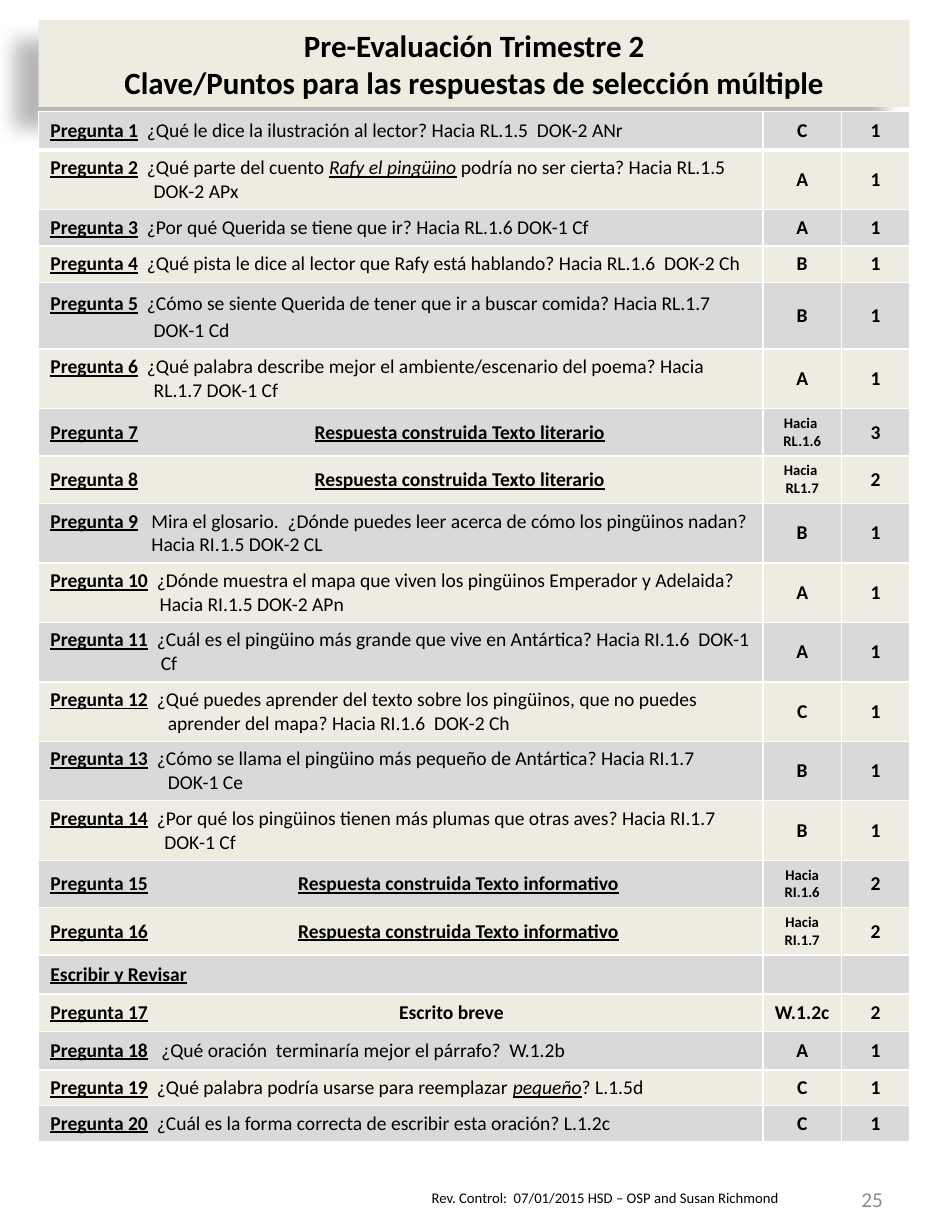
from lxml import etree
from pptx import Presentation
from pptx.dml.color import RGBColor
from pptx.enum.text import MSO_ANCHOR, MSO_AUTO_SIZE, PP_ALIGN
from pptx.oxml.ns import qn
from pptx.util import Inches, Pt

LEFT, CENTER, RIGHT = PP_ALIGN.LEFT, PP_ALIGN.CENTER, PP_ALIGN.RIGHT
TOP, MIDDLE = MSO_ANCHOR.TOP, MSO_ANCHOR.MIDDLE
GRAY, CREAM, WHITE = "D9D9D9", "EEECE1", "FFFFFF"

TITLE = ("Pre-Evaluación Trimestre 2\n"
         "Clave/Puntos para las respuestas de selección múltiple")
FOOTER = "Rev. Control:  07/01/2015 HSD – OSP and Susan Richmond"
PAGE_NUMBER = "25"
LITERARY = "Respuesta construida Texto literario"
INFORMATIVE = "Respuesta construida Texto informativo"

# Label, question (_italic_), answer, points, row height, hanging indent
QUESTIONS = [
    ("Pregunta 1", "  ¿Qué le dice la ilustración al lector? Hacia RL.1.5  DOK-2 ANr", "C", "1", 0.33, 0),
    ("Pregunta 2", "  ¿Qué parte del cuento _Rafy el pingüino_ podría no ser cierta? Hacia RL.1.5 DOK-2 APx",
     "A", "1", 0.5, 0.88),
    ("Pregunta 3", "  ¿Por qué Querida se tiene que ir? Hacia RL.1.6 DOK-1 Cf", "A", "1", 0.31, 0),
    ("Pregunta 4", "  ¿Qué pista le dice al lector que Rafy está hablando? Hacia RL.1.6  DOK-2 Ch",
     "B", "1", 0.31, 0),
    ("Pregunta 5", "  ¿Cómo se siente Querida de tener que ir a buscar comida? Hacia RL.1.7\nDOK-1 Cd",
     "B", "1", 0.57, 0.88),
    ("Pregunta 6", "  ¿Qué palabra describe mejor el ambiente/escenario del poema? Hacia RL.1.7 DOK-1 Cf",
     "A", "1", 0.5, 0.88),
    ("Pregunta 7", LITERARY, "Hacia \nRL.1.6", "3", 0.4, 0),
    ("Pregunta 8", LITERARY, "Hacia \nRL1.7", "2", 0.4, 0),
    ("Pregunta 9", "   Mira el glosario.  ¿Dónde puedes leer acerca de cómo los pingüinos nadan?\n"
     "Hacia RI.1.5 DOK-2 CL", "B", "1", 0.5, 0.86),
    ("Pregunta 10", "  ¿Dónde muestra el mapa que viven los pingüinos Emperador y Adelaida? Hacia RI.1.5 DOK-2 APn",
     "A", "1", 0.5, 0.93),
    ("Pregunta 11", "  ¿Cuál es el pingüino más grande que vive en Antártica? Hacia RI.1.6  DOK-1 Cf",
     "A", "1", 0.5, 0.94),
    ("Pregunta 12", "  ¿Qué puedes aprender del texto sobre los pingüinos, que no puedes aprender del mapa? "
     "Hacia RI.1.6  DOK-2 Ch", "C", "1", 0.5, 1),
    ("Pregunta 13", "  ¿Cómo se llama el pingüino más pequeño de Antártica? Hacia RI.1.7  DOK-1 Ce",
     "B", "1", 0.5, 1),
    ("Pregunta 14", "  ¿Por qué los pingüinos tienen más plumas que otras aves? Hacia RI.1.7\nDOK-1 Cf",
     "B", "1", 0.5, 0.97),
    ("Pregunta 15", INFORMATIVE, "Hacia RI.1.6", "2", 0.4, 0),
    ("Pregunta 16", INFORMATIVE, "Hacia RI.1.7", "2", 0.4, 0),
    ("Escribir y Revisar", "", "", "", 0.33, 0),
    ("Pregunta 17", "Escrito breve", "W.1.2c", "2", 0.32, 0),
    ("Pregunta 18", "   ¿Qué oración  terminaría mejor el párrafo?  W.1.2b", "A", "1", 0.33, 0),
    ("Pregunta 19", "  ¿Qué palabra podría usarse para reemplazar _pequeño_? L.1.5d", "C", "1", 0.3, 0),
    ("Pregunta 20", "  ¿Cuál es la forma correcta de escribir esta oración? L.1.2c", "C", "1", 0.3, 0),
]
HEADING_TABS = {LITERARY: 2.25, INFORMATIVE: 2.11, "Escrito breve": 2.97}
LOOSE_LABEL = "Pregunta 5"
COLUMNS = (6.17, 0.67, 0.58)
BOX_LEFT, BOX_WIDTH = 0.33, sum(COLUMNS)


def color(value):
    return RGBColor.from_string(value)


def add_xml(parent, tag, **attributes):
    return etree.SubElement(parent, qn(tag), {key: str(value) for key, value in attributes.items()})


def add_span(para, text, size=12, bold=False, italic=False, underline=False, ink="000000"):
    span = para.add_run()
    span.text = text
    font = span.font
    font.name, font.size, font.bold = "Calibri", Pt(size), bold
    font.italic, font.underline, font.color.rgb = italic, underline, color(ink)


def write(frame, text, align=LEFT, anchor=TOP, **style):
    """Write one paragraph per line of text."""
    frame.word_wrap, frame.vertical_anchor = True, anchor
    for number, line in enumerate(text.split("\n")):
        para = frame.add_paragraph() if number else frame.paragraphs[0]
        para.alignment = align
        if line:
            add_span(para, line, **style)
        else:
            add_xml(para._p, "a:endParaRPr", sz=1200)


def write_question(cell, label, question, hang):
    cell.vertical_anchor = MIDDLE
    for number, line in enumerate(question.split("\n")):
        para = cell.text_frame.add_paragraph() if number else cell.text_frame.paragraphs[0]
        if label == LOOSE_LABEL:
            para.line_spacing = 1.15
        settings = para._p.get_or_add_pPr()
        if hang:
            settings.set("marL", str(Inches(hang)))
            settings.set("indent", str(0 if number else -Inches(hang)))
        if not number:
            add_span(para, label, bold=True, underline=True)
        if line in HEADING_TABS:
            stops = add_xml(settings, "a:tabLst")
            add_xml(stops, "a:tab", pos=Inches(HEADING_TABS[line]), algn="l")
            add_span(para, "\t", bold=True)
            add_span(para, line, bold=True, underline=line.startswith("Respuesta"))
            continue
        for part, piece in enumerate(line.split("_")):
            if piece:
                add_span(para, piece, italic=part % 2 == 1, underline=part % 2 == 1)


def style_cell(cell, row):
    """White rules, heavier under the first row, and a banded fill."""
    properties = cell._tc.get_or_add_tcPr()
    for side in "LRTB":
        heavy = (row, side) in ((0, "B"), (1, "T"))
        line = add_xml(properties, f"a:ln{side}", w=Pt(3 if heavy else 1))
        add_xml(add_xml(line, "a:solidFill"), "a:srgbClr", val=WHITE)
    cell.fill.solid()
    cell.fill.fore_color.rgb = color(CREAM if row % 2 else GRAY)


def add_text(page, area, text, **style):
    box = page.shapes.add_textbox(*map(Inches, area))
    write(box.text_frame, text, **style)


def add_title(page):
    title = page.shapes.title
    title.left, title.top, title.width, title.height = map(Inches, (BOX_LEFT, 0.17, BOX_WIDTH, 0.74))
    title.fill.solid()
    title.fill.fore_color.rgb = color(CREAM)
    effects = add_xml(title._element.spPr, "a:effectLst")
    shadow = add_xml(effects, "a:outerShdw", blurRad=Pt(11.8), dist=Pt(19.7), dir=141 * 60000,
                     algn="ctr", rotWithShape=0)
    add_xml(add_xml(shadow, "a:srgbClr", val="000000"), "a:alpha", val=28000)
    title.text_frame.auto_size = MSO_AUTO_SIZE.NONE
    write(title.text_frame, TITLE, align=CENTER, anchor=MIDDLE, size=19, bold=True)


def add_answer_key(page):
    heights = [question[4] for question in QUESTIONS]
    area = (BOX_LEFT, 0.95, BOX_WIDTH, sum(heights))
    table = page.shapes.add_table(len(QUESTIONS), len(COLUMNS), *map(Inches, area)).table
    for column, width in zip(table.columns, COLUMNS):
        column.width = Inches(width)
    for row, (label, question, answer, points, height, hang) in enumerate(QUESTIONS):
        table.rows[row].height = Inches(height)
        for column in range(len(COLUMNS)):
            style_cell(table.cell(row, column), row)
        write_question(table.cell(row, 0), label, question, hang)
        for column, text in enumerate((answer, points), start=1):
            cell = table.cell(row, column)
            write(cell.text_frame, text, align=CENTER, bold=True,
                  size=9 if text.startswith("Hacia") else 12)
            cell.vertical_anchor = MIDDLE


def main():
    deck = Presentation()
    deck.slide_width, deck.slide_height = Inches(8), Inches(10.5)
    page = deck.slides.add_slide(deck.slide_layouts[5])
    add_title(page)
    add_answer_key(page)
    # Footer and page number
    add_text(page, (3.58, 10.08, 4, 0.25), FOOTER, size=9)
    add_text(page, (6.75, 9.94, 0.87, 0.56), PAGE_NUMBER, size=13, ink="8C8C8C",
             align=RIGHT, anchor=MIDDLE)
    deck.save("out.pptx")


if __name__ == "__main__":
    main()
